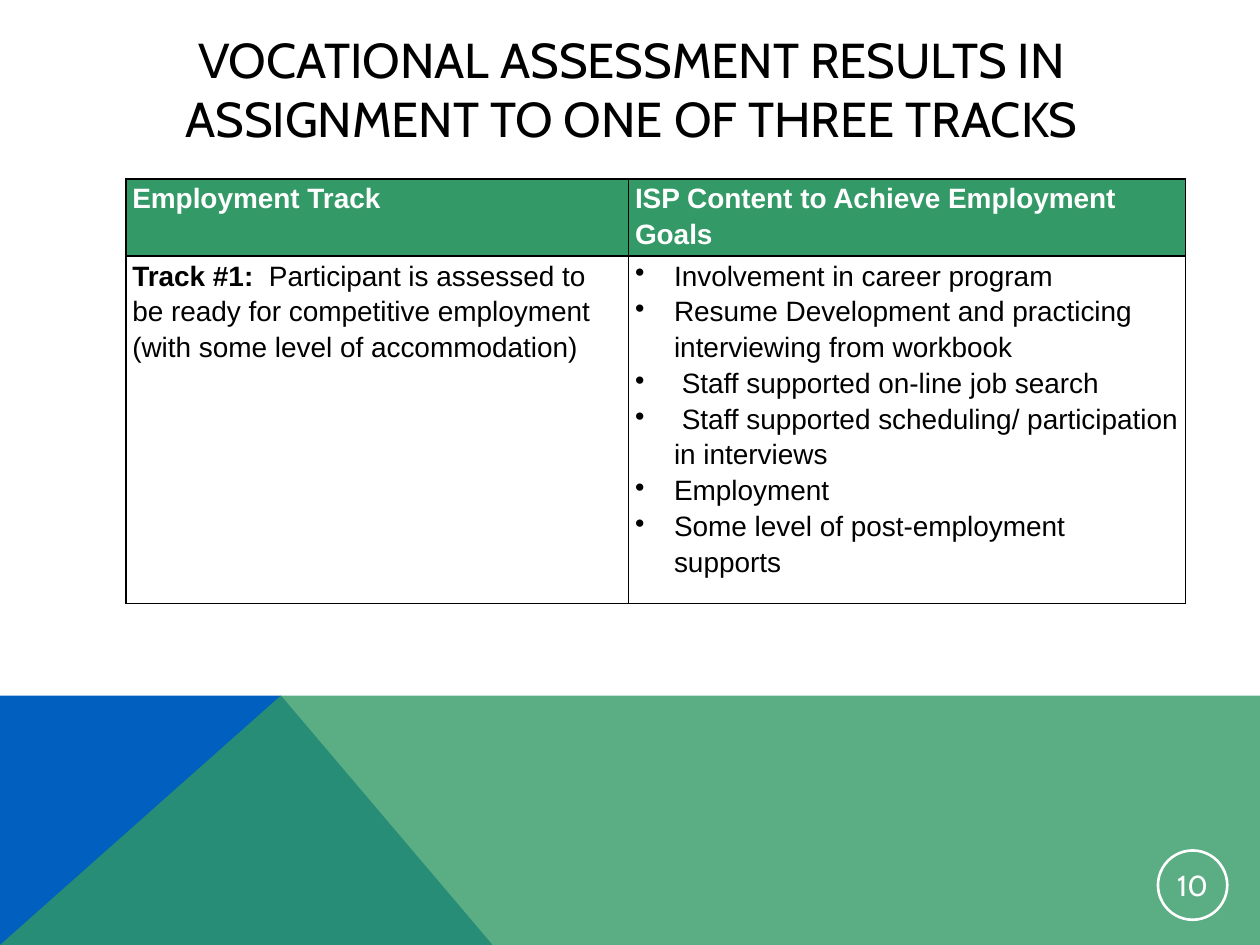
from lxml.etree import SubElement as Sub
from pptx import Presentation
from pptx.dml.color import RGBColor
from pptx.enum.shapes import MSO_SHAPE as Shape
from pptx.enum.text import MSO_ANCHOR as Anchor, PP_ALIGN as Align
from pptx.oxml.ns import qn
from pptx.util import Inches, Pt

BLACK, WHITE, GREEN, BLUE = "000000", "FFFFFF", "339966", "005FBF"
HEADS = ["Employment Track", "ISP Content to Achieve Employment Goals"]
TRACK = [
    ("Track #1:", True),
    ("  Participant is assessed to be ready for competitive employment "
     "(with some level of accommodation)", False),
]
GOALS = [
    "Involvement in career program",
    "Resume Development and practicing interviewing from workbook",
    " Staff supported on-line job search",
    " Staff supported scheduling/ participation in interviews",
    "Employment",
    "Some level of post-employment supports",
]


def rgb(code):
    return RGBColor.from_string(code)


def style(para, name, size, color, bold=None):
    font = para.font
    font.name, font.size, font.bold = name, Pt(size), bold
    font.color.rgb = rgb(color)


def label(frame, text, size, color):
    """Centre one line of heading type in a text frame."""
    frame.word_wrap = True
    frame.vertical_anchor = Anchor.MIDDLE
    para = frame.paragraphs[0]
    para.text, para.alignment = text, Align.CENTER
    style(para, "Cabin", size, color)


def add_title(slide, text):
    box = slide.shapes.add_textbox(Inches(0.9), Inches(0.4), Inches(8.22), Inches(0.6))
    label(box.text_frame, text, 28, BLACK)


def add_area(slide, points, color, alpha=None):
    """Draw a filled polygon; alpha is its opacity in percent."""
    pts = [(Inches(x), Inches(y)) for x, y in points]
    build = slide.shapes.build_freeform(*pts[0])
    build.add_line_segments(pts[1:], close=True)
    area = build.convert_to_shape()
    area.shadow.inherit = False
    area.line.fill.background()
    area.fill.solid()
    area.fill.fore_color.rgb = rgb(color)
    if alpha:
        clr = area.element.spPr.find(".//" + qn("a:srgbClr"))
        Sub(clr, qn("a:alpha"), val=str(alpha * 1000))


def add_badge(slide, text):
    ring = slide.shapes.add_shape(
        Shape.OVAL, Inches(9.19), Inches(6.75), Inches(0.55), Inches(0.55))
    ring.shadow.inherit = False
    ring.fill.background()
    ring.line.color.rgb = rgb(WHITE)
    ring.line.width = Pt(1.5)
    frame = ring.text_frame
    frame.margin_left = frame.margin_right = Inches(0.01)
    frame.margin_top = frame.margin_bottom = Inches(0.01)
    label(frame, text, 16.5, WHITE)


def frame_cell(cell, fill=None):
    """Set the margins, borders and fill of a cell."""
    cell.margin_left = cell.margin_right = Inches(0.05)
    cell.margin_top = cell.margin_bottom = 0
    props = cell._tc.get_or_add_tcPr()
    for side in ("lnL", "lnR", "lnT", "lnB"):
        line = Sub(props, qn("a:" + side), w=str(Pt(1)))
        Sub(Sub(line, qn("a:solidFill")), qn("a:srgbClr"), val=BLACK)
    if fill:
        cell.fill.solid()
        cell.fill.fore_color.rgb = rgb(fill)
    else:
        cell.fill.background()


def write(para, runs, color, bullet=False):
    for text, bold in runs:
        run = para.add_run()
        run.text, run.font.bold = text, bold
    para.line_spacing = 1.15
    if bullet:
        props = para._p.get_or_add_pPr()
        props.set("marL", str(Inches(0.31)))
        props.set("indent", str(-Inches(0.31)))
        Sub(props, qn("a:buChar"), char="•")
    style(para, "Arial", 16, color)


def add_tracks(slide):
    table = slide.shapes.add_table(
        2, 2, Inches(1), Inches(1.42), Inches(8.41), Inches(3.12)).table
    for col, width in zip(table.columns, (3.99, 4.42)):
        col.width = Inches(width)
    for row, height in zip(table.rows, (0.57, 2.55)):
        row.height = Inches(height)
    for i, head in enumerate(HEADS):
        cell = table.cell(0, i)
        frame_cell(cell, GREEN)
        write(cell.text_frame.paragraphs[0], [(head, True)], WHITE)
        frame_cell(table.cell(1, i))
    write(table.cell(1, 0).text_frame.paragraphs[0], TRACK, BLACK)
    frame = table.cell(1, 1).text_frame
    for i, goal in enumerate(GOALS):
        para = frame.add_paragraph() if i else frame.paragraphs[0]
        write(para, [(goal, False)], BLACK, bullet=True)


def main():
    deck = Presentation()
    deck.slide_width, deck.slide_height = Inches(10), Inches(7.5)
    slide = deck.slides.add_slide(deck.slide_layouts[6])
    top, peak, base = 5.52, 2.23, 7.5
    add_area(slide, [(0, base), (0, top), (peak, top), (3.91, base)], BLUE)
    add_area(slide, [(0, base), (peak, top), (10, top), (10, base)], GREEN, 80)
    add_title(slide, "VOCATIONAL ASSESSMENT RESULTS IN ASSIGNMENT TO ONE OF THREE TRACKS")
    add_badge(slide, "10")
    add_tracks(slide)
    deck.save("out.pptx")


if __name__ == "__main__":
    main()
